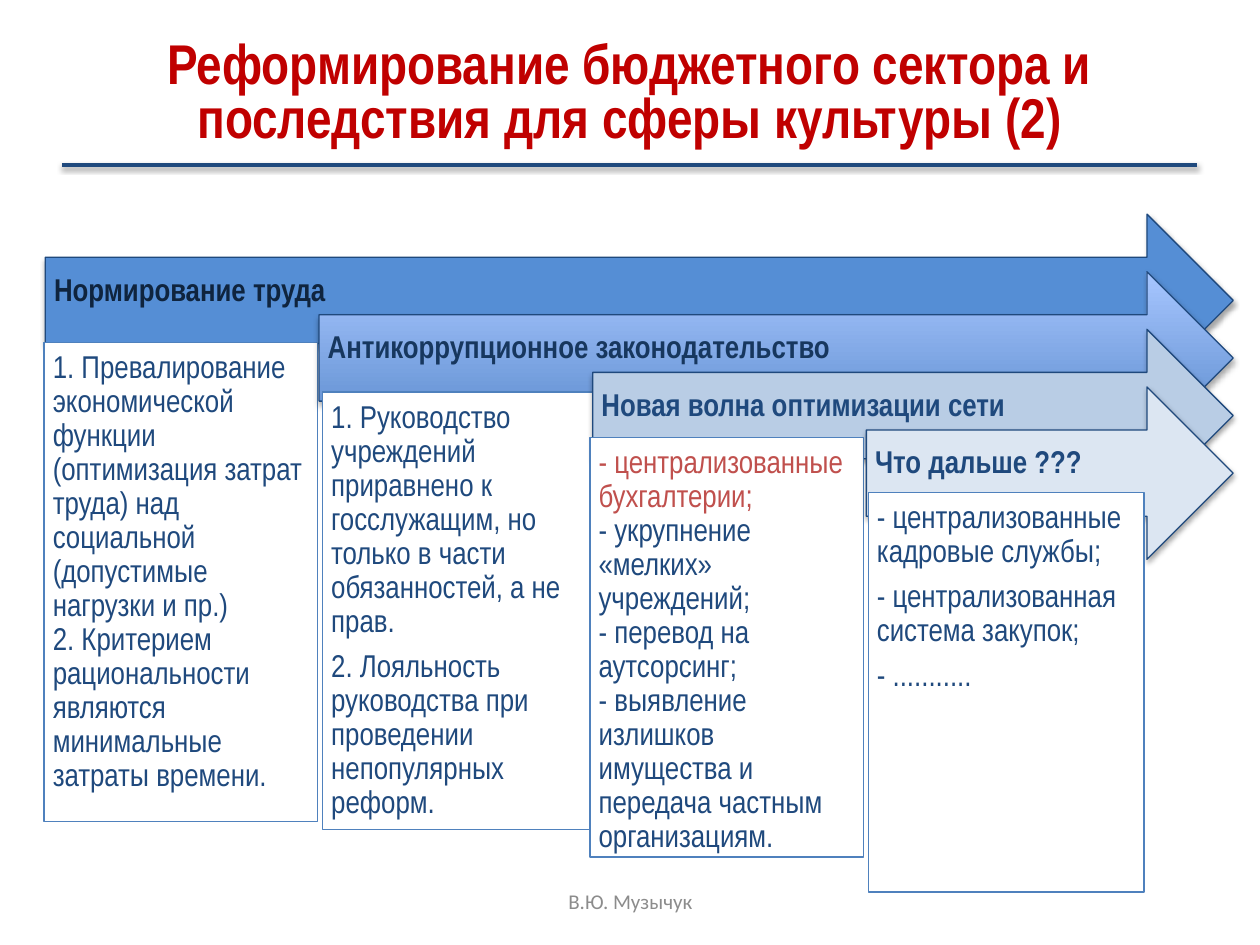
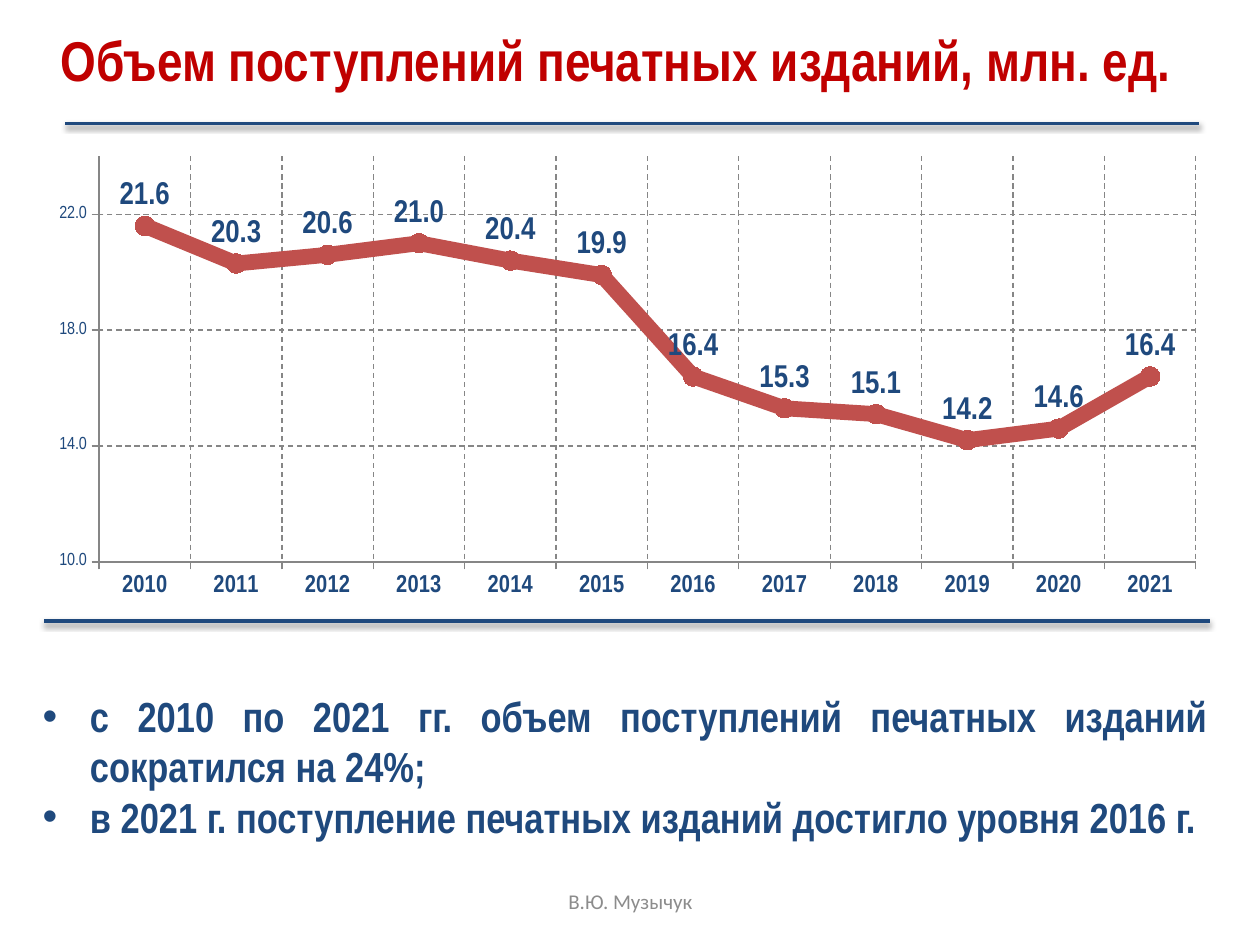
from lxml.etree import SubElement
from pptx import Presentation
from pptx.chart.data import CategoryChartData
from pptx.dml.color import RGBColor
from pptx.enum.chart import (XL_CHART_TYPE, XL_LABEL_POSITION, XL_MARKER_STYLE,
                             XL_TICK_MARK)
from pptx.enum.dml import MSO_LINE
from pptx.enum.shapes import MSO_CONNECTOR, MSO_SHAPE
from pptx.enum.text import MSO_ANCHOR, PP_ALIGN
from pptx.oxml import parse_xml
from pptx.oxml.ns import nsdecls, qn
from pptx.util import Pt

RED = RGBColor(0xC0, 0x00, 0x00)
BRICK = RGBColor(0xC0, 0x50, 0x4D)
NAVY = RGBColor(0x1F, 0x49, 0x7D)
BLUE = RGBColor(0x4F, 0x81, 0xBD)
MID_BLUE = RGBColor(0x55, 0x8E, 0xD5)
GRAD_DARK = RGBColor(0x56, 0x87, 0xC9)
GRAD_LIGHT = RGBColor(0xA7, 0xC6, 0xFF)
PALE_BLUE = RGBColor(0xB9, 0xCD, 0xE5)
ICE_BLUE = RGBColor(0xDC, 0xE6, 0xF2)
INK = RGBColor(0x0F, 0x24, 0x3E)
DEEP_BLUE = RGBColor(0x17, 0x37, 0x5E)
GREY = RGBColor(0x8C, 0x8C, 0x8C)
GRID_GREY = RGBColor(0x86, 0x86, 0x86)
WHITE = RGBColor(0xFF, 0xFF, 0xFF)
FONT, FOOTER_FONT = "Arial Narrow", "Calibri"

# Arrow staircase
ARROW_LEFT, ARROW_TOP, ARROW_RIGHT, ARROW_H = 25.9, 122.4, 704.7, 98.6
STEP_X, STEP_Y = 156.4, 32.9

# heading, heading colour, arrow fill, panel (dx, dy, width, height),
# space after each paragraph, paragraphs with colours
STAGES = [
    ("Нормирование труда", INK, MID_BLUE, (-0.7, 73.4, 156.2, 273.6), 0,
     [("1. Превалирование экономической функции (оптимизация затрат труда) "
       "над социальной (допустимые нагрузки и пр.)", NAVY),
      ("2. Критерием рациональности являются минимальные затраты времени.", NAVY)]),
    ("Антикоррупционное законодательство", DEEP_BLUE, (GRAD_DARK, GRAD_LIGHT),
     (2, 68.8, 156.2, 249.8), 6.3,
     [("1. Руководство учреждений приравнено к госслужащим, но только в части "
       "обязанностей, а не прав.", NAVY),
      ("2. Лояльность руководства при проведении непопулярных реформ.", NAVY)]),
    ("Новая волна оптимизации сети", NAVY, PALE_BLUE, (-1.6, 61.7, 156.2, 239.8), 0,
     [("- централизованные бухгалтерии;", BRICK),
      ("- укрупнение «мелких» учреждений;", NAVY),
      ("- перевод на аутсорсинг;", NAVY),
      ("- выявление излишков имущества и передача частным организациям.", NAVY)]),
    ("Что дальше ???", NAVY, ICE_BLUE, (1, 60.4, 157.7, 228.2), 6.3,
     [("- централизованные кадровые службы;", NAVY),
      ("- централизованная система закупок;", NAVY),
      ("- ...........", NAVY)]),
]

INTAKE = {2010: 21.6, 2011: 20.3, 2012: 20.6, 2013: 21.0, 2014: 20.4, 2015: 19.9,
          2016: 16.4, 2017: 15.3, 2018: 15.1, 2019: 14.2, 2020: 14.6, 2021: 16.4}
FINDINGS = [
    "с 2010 по 2021 гг. объем поступлений печатных изданий сократился на 24%;",
    "в 2021 г. поступление печатных изданий достигло уровня 2016 г.",
]


def pts(box):
    return [Pt(v) for v in box]


def set_font(font, size, color, bold=False, name=FONT):
    font.size, font.bold, font.name = Pt(size), bold, name
    font.color.rgb = color


def add_par(tf, text, size, color, bold=False, name=FONT, align=PP_ALIGN.LEFT,
            spacing=None, after=0):
    """Fill the first empty paragraph, or append a new one."""
    p = tf.paragraphs[0] if not tf.paragraphs[0].runs else tf.add_paragraph()
    p.alignment, p.line_spacing, p.space_after = align, spacing, Pt(after)
    r = p.add_run()
    r.text = text
    set_font(r.font, size, color, bold, name)
    return p


def add_text_box(s, box, anchor=MSO_ANCHOR.TOP):
    tf = s.shapes.add_textbox(*pts(box)).text_frame
    tf.word_wrap, tf.vertical_anchor = True, anchor
    return tf


def set_margins(tf, left, top, right, bottom):
    tf.margin_left, tf.margin_top = Pt(left), Pt(top)
    tf.margin_right, tf.margin_bottom = Pt(right), Pt(bottom)


def add_shadow(sp, dist, alpha):
    sp_pr = sp._element.spPr
    for old in sp_pr.findall(qn("a:effectLst")):
        sp_pr.remove(old)
    sp_pr.append(parse_xml(
        f'<a:effectLst {nsdecls("a")}><a:outerShdw blurRad="{Pt(3.1)}" '
        f'dist="{Pt(dist)}" dir="5400000" rotWithShape="0"><a:srgbClr val="000000">'
        f'<a:alpha val="{alpha}000"/></a:srgbClr></a:outerShdw></a:effectLst>'))


def add_block(s, kind, box, fill, line):
    """Add a shape filled with one colour or with a (bottom, top) gradient."""
    sp = s.shapes.add_shape(kind, *pts(box))
    sp.shadow.inherit = False
    if isinstance(fill, RGBColor):
        sp.fill.solid()
        sp.fill.fore_color.rgb = fill
    else:
        sp.fill.gradient()
        sp.fill.gradient_angle = 90
        for stop, color in zip(sp.fill.gradient_stops, fill):
            stop.color.rgb = color
    sp.line.color.rgb, sp.line.width = line, Pt(0.75)
    sp.text_frame.word_wrap = True
    return sp


# Shared parts
def add_title(s, box, text):
    add_par(add_text_box(s, box, MSO_ANCHOR.MIDDLE), text, 32, RED, True,
            align=PP_ALIGN.CENTER, spacing=0.8)


def add_rule(s, left, right, y):
    line = s.shapes.add_connector(MSO_CONNECTOR.STRAIGHT, *pts((left, y, right, y)))
    line.line.color.rgb, line.line.width = NAVY, Pt(2)
    add_shadow(line, 1.6, 38)


def add_footer(s):
    tf = add_text_box(s, (246.2, 500.4, 228.2, 28.8), MSO_ANCHOR.MIDDLE)
    add_par(tf, "В.Ю. Музычук", 12, GREY, name=FOOTER_FONT, align=PP_ALIGN.CENTER)


# One stage: an arrow with its heading and a panel over its lower edge
def add_stage(s, left, top, stage):
    heading, color, fill, (dx, dy, width, height), after, items = stage
    arrow = add_block(s, MSO_SHAPE.RIGHT_ARROW,
                      (left, top, ARROW_RIGHT - left, ARROW_H), fill, NAVY)
    add_shadow(arrow, 1.8, 35)
    tf = arrow.text_frame
    tf.vertical_anchor = MSO_ANCHOR.MIDDLE
    set_margins(tf, 5, 5, 20, 15.7)
    add_par(tf, heading, 18, color, True, spacing=0.9, after=6.3)

    panel = add_block(s, MSO_SHAPE.RECTANGLE, (left + dx, top + dy, width, height),
                      WHITE, BLUE)
    tf = panel.text_frame
    tf.vertical_anchor = MSO_ANCHOR.TOP
    set_margins(tf, 5, 5, 5, 5)
    for text, item_color in items:
        add_par(tf, text, 18, item_color, spacing=0.9, after=after)


# Line chart of yearly intake
def style_axis(axis, size, bold):
    axis.has_major_gridlines = True
    axis.major_tick_mark = XL_TICK_MARK.OUTSIDE
    axis.minor_tick_mark = XL_TICK_MARK.NONE
    set_font(axis.tick_labels.font, size, NAVY, bold)
    axis.format.line.color.rgb = GRID_GREY
    grid = axis.major_gridlines.format.line
    grid.color.rgb, grid.width, grid.dash_style = GRID_GREY, Pt(0.75), MSO_LINE.DASH


def set_plot_area(chart, x, y, w, h):
    area = chart._chartSpace.chart.plotArea
    for old in area.findall(qn("c:layout")):
        area.remove(old)
    layout = parse_xml(f'<c:layout {nsdecls("c")}><c:manualLayout/></c:layout>')
    for tag, val in [("layoutTarget", "inner"), ("xMode", "edge"), ("yMode", "edge"),
                     ("x", x), ("y", y), ("w", w), ("h", h)]:
        SubElement(layout[0], qn(f"c:{tag}")).set("val", str(val))
    area.insert(0, layout)


def add_intake_chart(s, box):
    data = CategoryChartData(number_format="0.0")
    data.categories = [str(year) for year in INTAKE]
    data.add_series("Series 1", list(INTAKE.values()))
    chart = s.shapes.add_chart(XL_CHART_TYPE.LINE_MARKERS, *pts(box), data).chart
    chart.has_legend = chart.has_title = False
    chart.font.size, chart.font.name = Pt(10), FOOTER_FONT
    set_plot_area(chart, 0.047, 0.037, 0.937, 0.789)

    style_axis(chart.category_axis, 14, True)
    axis = chart.value_axis
    style_axis(axis, 10, False)
    axis.minimum_scale, axis.maximum_scale, axis.major_unit = 10, 24, 4
    axis.tick_labels.number_format = "0.0"
    axis.tick_labels.number_format_is_linked = False

    plot = chart.plots[0]
    plot.vary_by_categories = False
    series = plot.series[0]
    series.smooth = False
    series.format.line.color.rgb, series.format.line.width = BRICK, Pt(9)
    marker = series.marker
    marker.style, marker.size = XL_MARKER_STYLE.CIRCLE, 11
    marker.format.fill.solid()
    marker.format.fill.fore_color.rgb = BRICK
    marker.format.line.color.rgb = BRICK

    labels = series.data_labels
    labels.show_value, labels.position = True, XL_LABEL_POSITION.ABOVE
    labels.number_format, labels.number_format_is_linked = "0.0", False
    set_font(labels.font, 18, NAVY, True)


def add_findings(s, box):
    tf = add_text_box(s, box)
    for text in FINDINGS:
        p = add_par(tf, text, 24, NAVY, True, align=PP_ALIGN.JUSTIFY)
        p_pr = p._p.get_or_add_pPr()
        p_pr.set("marL", str(Pt(27)))
        p_pr.set("indent", str(-Pt(27)))
        SubElement(p_pr, qn("a:buFont")).set("typeface", "Arial")
        SubElement(p_pr, qn("a:buChar")).set("char", "•")


# Slides
def build_reform_slide(s):
    add_title(s, (36, 9.4, 648, 90), "Реформирование бюджетного сектора и "
              "последствия для сферы культуры (2)")
    for i, stage in enumerate(STAGES):
        add_stage(s, ARROW_LEFT + i * STEP_X, ARROW_TOP + i * STEP_Y, stage)
    add_rule(s, 35.3, 684, 94.3)
    add_footer(s)


def build_intake_slide(s):
    add_title(s, (4.3, 6.5, 695.5, 61.2), "Объем поступлений печатных изданий, млн. ед.")
    add_rule(s, 37.4, 685.4, 70.6)
    add_rule(s, 25.2, 691.2, 355)
    add_findings(s, (17.3, 391, 679.7, 123.8))
    add_footer(s)
    add_intake_chart(s, (25.2, 78.5, 668.9, 293.8))


def main():
    prs = Presentation()
    prs.slide_width, prs.slide_height = Pt(720), Pt(540)
    for build in (build_reform_slide, build_intake_slide):
        build(prs.slides.add_slide(prs.slide_layouts[6]))
    prs.save("out.pptx")


if __name__ == "__main__":
    main()
